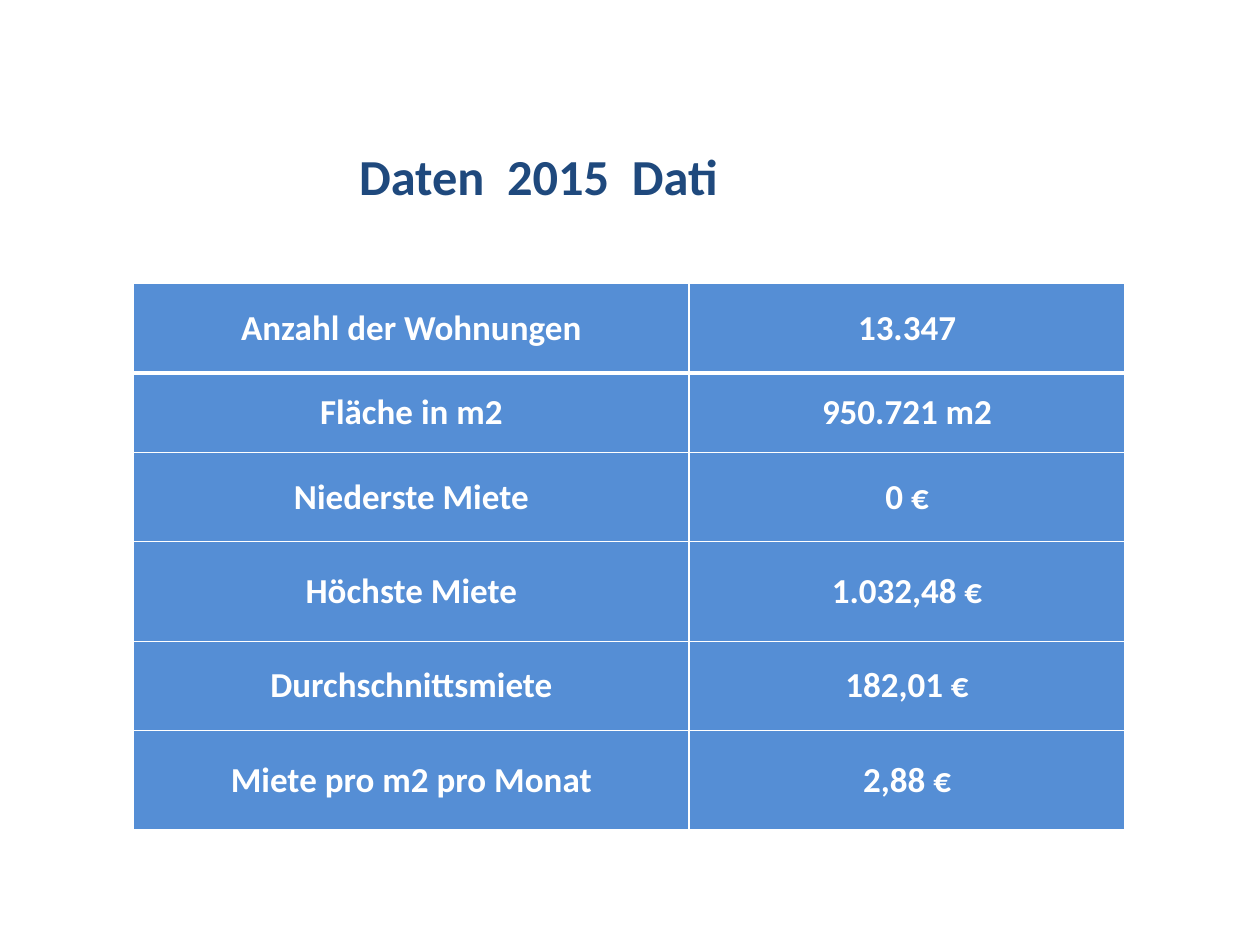
import lxml.etree
import pptx
import pptx.dml.color
import pptx.enum.text
import pptx.oxml.ns
import pptx.util

WHITE = pptx.dml.color.RGBColor(0xFF, 0xFF, 0xFF)
NAVY = pptx.dml.color.RGBColor(0x1F, 0x49, 0x7D)
BLUE = pptx.dml.color.RGBColor(0x55, 0x8E, 0xD5)

FIGURES = [
    ("Anzahl der Wohnungen", "13.347"),
    ("Fläche in m2", "950.721 m2"),
    ("Niederste Miete", "0 €"),
    ("Höchste Miete", "1.032,48 €"),
    ("Durchschnittsmiete", "182,01 €"),
    ("Miete pro m2 pro Monat", "2,88 €"),
]
COLUMN_WIDTHS = [4.41, 3.46]
ROW_HEIGHTS = [0.71, 0.63, 0.71, 0.79, 0.71, 0.79]


def write(frame, text, size, color):
    """Put one bold, centred line into a text frame."""
    frame.word_wrap = True
    line = frame.paragraphs[0]
    line.alignment = pptx.enum.text.PP_ALIGN.CENTER
    run = line.add_run()
    run.text = text
    run.font.name = "Calibri"
    run.font.size = pptx.util.Pt(size)
    run.font.bold = True
    run.font.color.rgb = color


def add_border(cell, side, points):
    properties = cell._tc.get_or_add_tcPr()
    border = lxml.etree.SubElement(
        properties, pptx.oxml.ns.qn(f"a:ln{side}"), w=str(pptx.util.Pt(points)))
    fill = lxml.etree.SubElement(border, pptx.oxml.ns.qn("a:solidFill"))
    lxml.etree.SubElement(fill, pptx.oxml.ns.qn("a:srgbClr"), val=str(WHITE))


deck = pptx.Presentation()
deck.slide_width = pptx.util.Inches(10)
deck.slide_height = pptx.util.Inches(7.5)
slide = deck.slides.add_slide(deck.slide_layouts[6])

heading = slide.shapes.add_textbox(
    *map(pptx.util.Inches, (0.75, 0.92, 7.95, 0.94))).text_frame
heading.vertical_anchor = pptx.enum.text.MSO_ANCHOR.MIDDLE
heading.margin_right = pptx.util.Inches(1)  # moves the centred heading left
write(heading, "Daten  2015  Dati", size=28.8, color=NAVY)

rents = slide.shapes.add_table(
    len(FIGURES), len(COLUMN_WIDTHS),
    pptx.util.Inches(1.06), pptx.util.Inches(2.25),
    pptx.util.Inches(sum(COLUMN_WIDTHS)), pptx.util.Inches(sum(ROW_HEIGHTS))).table
for column, width in zip(rents.columns, COLUMN_WIDTHS):
    column.width = pptx.util.Inches(width)

for row_index, (row, height, figures) in enumerate(zip(rents.rows, ROW_HEIGHTS, FIGURES)):
    row.height = pptx.util.Inches(height)
    top = 3 if row_index == 1 else 1
    bottom = 3 if row_index == 0 else 1
    for cell, text in zip(row.cells, figures):
        for side, points in (("L", 1), ("R", 1), ("T", top), ("B", bottom)):
            add_border(cell, side, points)
        cell.fill.solid()
        cell.fill.fore_color.rgb = BLUE
        cell.vertical_anchor = pptx.enum.text.MSO_ANCHOR.MIDDLE
        write(cell.text_frame, text, size=20, color=WHITE)

deck.save("out.pptx")
